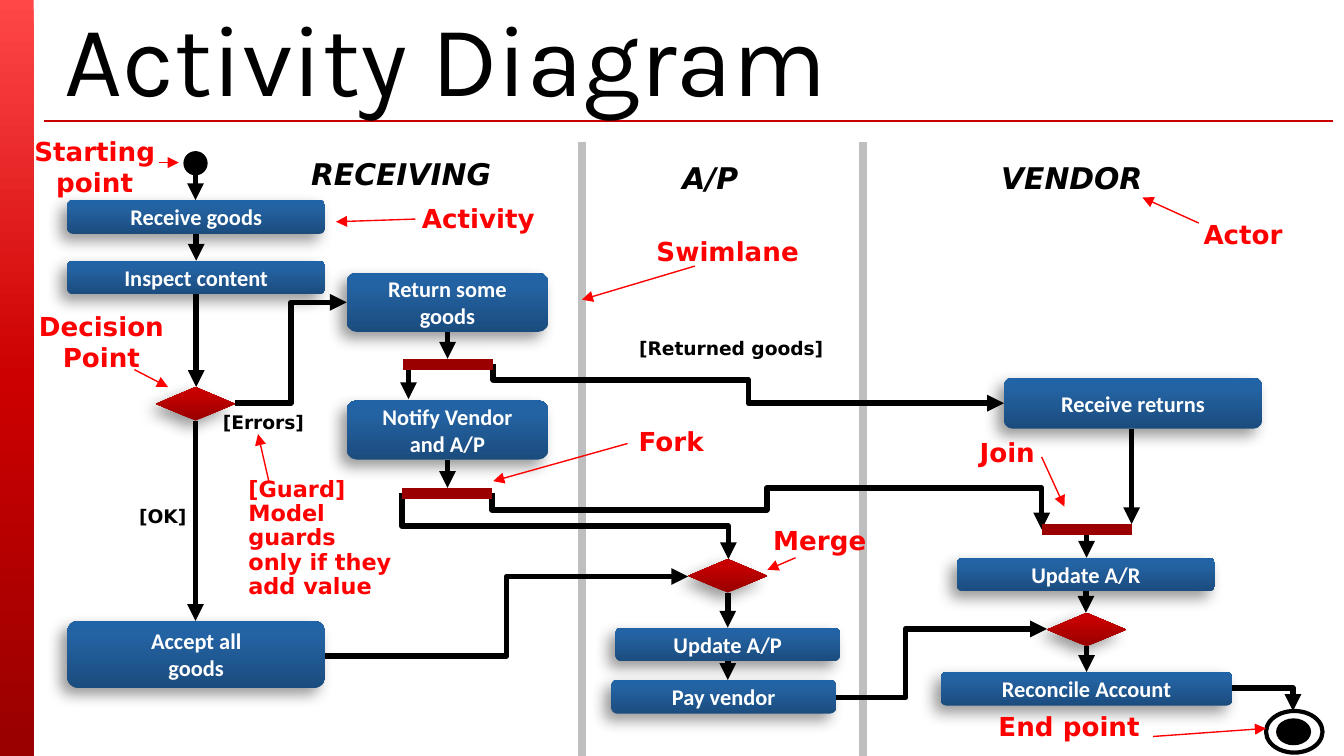
from lxml import etree
from pptx import Presentation
from pptx import util as u
from pptx.dml.color import RGBColor
from pptx.enum import shapes, text
from pptx.oxml.ns import nsdecls, qn
from pptx.oxml import parse_xml

THEME = {
    "black": "000000", "white": "FFFFFF", "red": "FF0000", "bar": "9A0000",
    "lane": "BFBFBF", "rule": "C80000",
    "side": [(0, "FF4747"), (50, "CC0000"), (100, "990000")],
    "box": [(0, "1B4C7E"), (80, "2363A3"), (100, "2063A6")],
    "diamond": [(0, "980000"), (80, "C60000"), (100, "C70000")],
    "title_font": "Karla", "box_font": "Calibri", "label_font": "DejaVu Sans",
    "title": 54, "actor": 16, "note": 14, "activity": 12, "guard": 10,
    "flow": 3, "thin": 0.75, "lane_width": 4.5, "bar_width": 6, "ring": 2.25,
}

# Positions are in inches: left, top, width, height
WIDTH = 10
HEIGHT = WIDTH * 9 / 16
ACTIVITIES = {
    "receive": ("Receive goods", 0.5, 1.49, 1.92, 0.25),
    "inspect": ("Inspect content", 0.5, 1.94, 1.92, 0.25),
    "return": ("Return some\vgoods", 2.58, 2.03, 1.5, 0.44),
    "pay": ("Pay vendor", 4.55, 5.06, 1.67, 0.25),
    "accept": ("Accept all\vgoods", 0.5, 4.62, 1.92, 0.5),
    "returns": ("Receive returns", 7.47, 2.81, 1.92, 0.38),
    "notify": ("Notify Vendor\vand A/P", 2.58, 2.98, 1.5, 0.44),
    "update_ar": ("Update A/R", 7.12, 4.15, 1.92, 0.25),
    "reconcile": ("Reconcile Account", 7, 5, 2.17, 0.25),
    "update_ap": ("Update A/P", 4.58, 4.67, 1.67, 0.25),
}
DIAMONDS = {
    "decision": (1.16, 2.88, 0.59, 0.25),
    "merge_ap": (5.12, 4.16, 0.59, 0.25),
    "merge_ar": (7.79, 4.56, 0.59, 0.25),
}
BARS = {
    "fork_returns": (3, 2.67, 0.67, 0.08),
    "fork_notice": (2.99, 3.63, 0.67, 0.08),
    "join": (7.75, 3.9, 0.67, 0.08),
}
START = {"start": (1.37, 1.13, 0.17, 0.17)}
END_DOT, END_RING = (9.5, 5.35, 0.25, 0.19), (9.42, 5.29, 0.42, 0.31)
LANES = [4.33, 6.42]

DOWN_FLOWS = [
    ("start", "receive"), ("receive", "inspect"), ("inspect", "decision"),
    ("decision", "accept"), ("return", "fork_returns"), ("notify", "fork_notice"),
    ("join", "update_ar"), ("update_ar", "merge_ar"), ("merge_ar", "reconcile"),
    ("merge_ap", "update_ap"), ("update_ap", "pay"),
]
SIDE_FLOWS = [(3.04, 2.69, 3.04, 2.97), (8.42, 3.19, 8.42, 3.9)]
# Ends, number of the bent preset, bend positions, whether it leaves downwards
BENT_FLOWS = [
    ((1.75, 3, 2.58, 2.25), 3, [0.5], False),
    ((2.42, 4.88, 5.12, 4.29), 3, [0.5], False),
    ((6.22, 5.19, 7.79, 4.68), 3, [0.33], False),
    ((9.17, 5.12, 9.62, 5.29), 2, [], False),
    ((3.67, 2.71, 7.47, 3), 4, [0.4, 0.5], True),
    ((2.99, 3.67, 5.42, 4.16), 3, [0.5], True),
    ((3.66, 3.67, 7.75, 3.94), 5, [0.455, 0.5, -0.145], True),
]
# Text, position, whether it wraps
GUARDS = [
    ("[OK]", (0.92, 3.67, 0.58, 0.37), False),
    ("[Errors]", (1.54, 2.97, 0.84, 0.37), False),
    ("[Returned goods]", (4.64, 2.42, 1.6, 0.37), False),
]
ACTORS = [
    ("RECEIVING", (2.17, 1.06, 1.63, 0.47), False),
    ("A/P", (4.94, 1.09, 0.69, 0.47), False),
    ("VENDOR", (7.34, 1.09, 1.27, 0.47), False),
]
NOTES = [
    ("Starting point", (0.12, 0.91, 1.17, 0.67), True),
    ("Activity", (3.04, 1.41, 1.04, 0.44), False),
    ("Decision Point", (0.17, 2.21, 1.17, 0.67), True),
    ("End point", (7.33, 5.19, 1.25, 0.44), False),
    ("Swimlane", (4.58, 1.65, 1.67, 0.44), True),
    ("Fork", (4.58, 3.07, 0.83, 0.44), True),
    ("Join", (7.08, 3.15, 0.83, 0.44), True),
    ("Actor", (8.75, 1.53, 1, 0.44), True),
    ("Merge", (5.6, 3.8, 1, 0.44), True),
]
GUARD_NOTE = ("[Guard] Model guards\nonly if they add value", (1.75, 3.46, 1.42, 1.11))
POINTERS = [
    (2, 3.58, 1.92, 3.23), (1.18, 1.21, 1.33, 1.21), (5.17, 1.98, 4.33, 2.23),
    (1, 2.75, 1.25, 2.88), (8.58, 5.48, 9.42, 5.42), (3.09, 1.63, 2.5, 1.65),
    (4.67, 3.3, 3.67, 3.58), (7.75, 3.4, 7.92, 3.77), (8.92, 1.66, 8.5, 1.47),
    (5.92, 4.15, 5.71, 4.24),
]


def lengths(inches):
    return [u.Cm(value * 2.54) for value in inches]


def color(name):
    return RGBColor.from_string(THEME[name])


def write(shape, words, size, ink, font="label_font", align="CENTER", wrap=False, bold=True, italic=False):
    frame = shape.text_frame
    frame.text = words
    frame.word_wrap = wrap
    frame.margin_left = frame.margin_right = frame.margin_top = frame.margin_bottom = u.Cm(0.25)
    for para in frame.paragraphs:
        para.alignment = getattr(text.PP_ALIGN, align)
        for span in para.runs:
            span.font.name, span.font.size = THEME[font], u.Pt(THEME[size])
            span.font.bold, span.font.italic = bold, italic
            span.font.color.rgb = color(ink)
    return frame


def add_shape(page, kind, place, stops=None, angle=270, shadow=False):
    """Add a preset shape without line; stops give it a gradient."""
    shape = page.shapes.add_shape(kind, *lengths(place))
    shape.shadow.inherit = False
    shape.line.fill.background()
    shape.fill.background()
    properties = shape.element.spPr
    if stops:
        marks = "".join(f'<a:gs pos="{at * 1000}"><a:srgbClr val="{tone}"/></a:gs>' for at, tone in stops)
        properties.replace(properties.find(qn("a:noFill")), parse_xml(
            f'<a:gradFill {nsdecls("a")} rotWithShape="1"><a:gsLst>{marks}</a:gsLst>'
            f'<a:lin ang="{angle * 60000}" scaled="0"/></a:gradFill>'))
    if shadow:
        properties.find(qn("a:effectLst")).append(parse_xml(
            f'<a:outerShdw {nsdecls("a")} blurRad="{u.Pt(8)}" dist="{u.Pt(5)}" dir="8100000" '
            'algn="tr" rotWithShape="0"><a:srgbClr val="000000"><a:alpha val="40000"/>'
            '</a:srgbClr></a:outerShdw>'))
    return shape


def add_line(page, ends, ink, width, arrow=False, kind="STRAIGHT"):
    line = page.shapes.add_connector(getattr(shapes.MSO_CONNECTOR, kind), *lengths(ends))
    line.line.color.rgb, line.line.width = color(ink), u.Pt(THEME[width])
    properties = line.element.spPr
    if arrow:
        etree.SubElement(properties.get_or_add_ln(), qn("a:tailEnd"), type="triangle")
    etree.SubElement(properties, qn("a:effectLst"))
    return line


def add_bent_flow(page, ends, preset, bends, downwards):
    """Add an elbow arrow; one that leaves downwards is a turned, flipped preset."""
    line = add_line(page, ends, "black", "flow", True, "ELBOW")
    properties = line.element.spPr
    geometry = properties.find(qn("a:prstGeom"))
    geometry.set("prst", f"bentConnector{preset}")
    guides = geometry.find(qn("a:avLst"))
    for number, bend in enumerate(bends, 1):
        etree.SubElement(guides, qn("a:gd"), name=f"adj{number}", fmla=f"val {round(bend * 100000)}")
    if downwards:
        x1, y1, x2, y2 = ends
        wide, high = y2 - y1, x2 - x1
        place = ((x1 + x2 - wide) / 2, (y1 + y2 - high) / 2, wide, high)
        line.left, line.top, line.width, line.height = lengths(place)
        turn = properties.find(qn("a:xfrm"))
        turn.set("rot", str(270 * 60000))
        turn.set("flipH", "1")


def add_label(page, words, place, wrap, size, ink, **style):
    frame = write(page.shapes.add_textbox(*lengths(place)), words, size, ink, wrap=wrap, **style)
    frame.auto_size = text.MSO_AUTO_SIZE.SHAPE_TO_FIT_TEXT
    return frame


def main():
    deck = Presentation()
    deck.slide_width, deck.slide_height = lengths((WIDTH, HEIGHT))
    page = deck.slides.add_slide(deck.slide_layouts[6])
    kinds = shapes.MSO_SHAPE

    add_shape(page, kinds.RECTANGLE, (0, 0, 0.25, HEIGHT), THEME["side"], 90)
    add_line(page, (0.33, 0.9, 9.92, 0.9), "rule", "thin")
    title = page.shapes.add_textbox(*lengths((0.38, 0.15, 9.58, 0.53)))
    frame = write(title, "Activity Diagram", "title", "black", "title_font", "LEFT", True, False)
    frame.vertical_anchor = text.MSO_ANCHOR.MIDDLE
    for x in LANES:
        add_line(page, (x, 1.06, x, HEIGHT), "lane", "lane_width")

    for place in (START["start"], END_DOT):
        dot = add_shape(page, kinds.OVAL, place)
        dot.fill.solid()
        dot.fill.fore_color.rgb = color("black")
        dot.line.color.rgb, dot.line.width = color("black"), u.Pt(THEME["thin"])
    ring = add_shape(page, kinds.OVAL, END_RING)
    ring.line.color.rgb, ring.line.width = color("black"), u.Pt(THEME["ring"])

    for words, *place in ACTIVITIES.values():
        box = add_shape(page, kinds.ROUNDED_RECTANGLE, place, THEME["box"], shadow=True)
        frame = write(box, words, "activity", "white", "box_font")
        frame.vertical_anchor = text.MSO_ANCHOR.MIDDLE
    for place in DIAMONDS.values():
        add_shape(page, kinds.DIAMOND, place, THEME["diamond"], shadow=True)

    nodes = {name: place for name, (_, *place) in ACTIVITIES.items()} | DIAMONDS | BARS | START
    for source, target in DOWN_FLOWS:
        left, top, width, height = nodes[source]
        middle = left + width / 2
        add_line(page, (middle, top + height, middle, nodes[target][1]), "black", "flow", True)
    for ends in SIDE_FLOWS:
        add_line(page, ends, "black", "flow", True)
    for flow in BENT_FLOWS:
        add_bent_flow(page, *flow)
    for left, top, width, height in BARS.values():
        middle = top + height / 2
        add_line(page, (left, middle, left + width, middle), "bar", "bar_width")

    for label in GUARDS:
        add_label(page, *label, "guard", "black")
    for label in ACTORS:
        add_label(page, *label, "actor", "black", italic=True)
    for label in NOTES:
        add_label(page, *label, "note", "red")
    frame = add_label(page, *GUARD_NOTE, True, "activity", "red", align="LEFT")
    for para in frame.paragraphs:
        para.line_spacing = 0.9
    for ends in POINTERS:
        add_line(page, ends, "red", "thin", True)
    deck.save("out.pptx")


if __name__ == "__main__":
    main()
